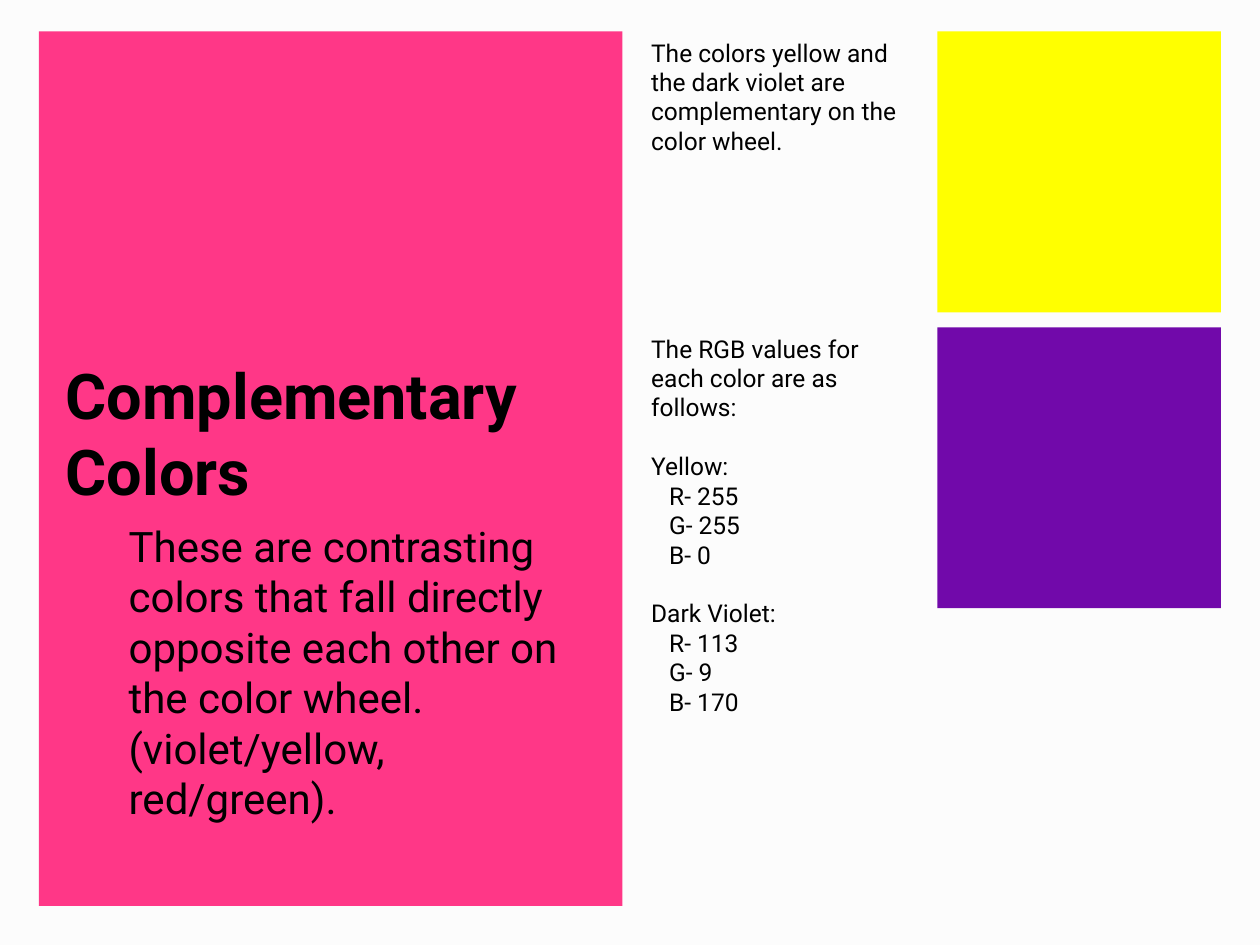
from lxml.etree import SubElement
from pptx import Presentation
from pptx.dml.color import RGBColor
from pptx.enum.shapes import MSO_SHAPE as Shape
from pptx.enum.text import MSO_ANCHOR as Anchor, MSO_AUTO_SIZE as AutoSize, PP_ALIGN as Align
from pptx.oxml.ns import qn
from pptx.util import Pt

COLORS = {
    "background": "FCFCFC",
    "panel": "FF3787",
    "yellow": "FFFF00",
    "violet": "7109AA",
    "text": "000000",
}
FONT = "Roboto"
NOTE_SIZE = 14
NOTE_LINE = 16.8
CHANNEL_INDENT = 10.3
SWATCH_WIDTH, SWATCH_HEIGHT = 162, 160.5
COLUMN_GAP = 8.6


def rgb(name):
    return RGBColor.from_string(COLORS[name])


def place(shape, left, top, width, height):
    shape.left, shape.top = Pt(left), Pt(top)
    shape.width, shape.height = Pt(width), Pt(height)


def format_runs(text_frame, size, bold=False):
    for paragraph in text_frame.paragraphs:
        paragraph.alignment = Align.LEFT
        for run in paragraph.runs:
            run.font.name = FONT
            run.font.size = Pt(size)
            run.font.bold = bold
            run.font.color.rgb = rgb("text")


def set_indent(paragraph, margin):
    """Indent the whole paragraph and remove its bullet."""
    properties = paragraph._p.get_or_add_pPr()
    properties.set("marL", str(Pt(margin)))
    properties.set("indent", "0")
    SubElement(properties, qn("a:buNone"))


def add_block(slide, color, left, top, width, height):
    block = slide.shapes.add_shape(
        Shape.RECTANGLE, Pt(left), Pt(top), Pt(width), Pt(height))
    block.shadow.inherit = False
    block.fill.solid()
    block.fill.fore_color.rgb = rgb(color)
    block.line.fill.background()
    return block


def add_title_panel(slide, left, top, width, height):
    """Colored panel behind the title and body placeholders."""
    title, body = slide.shapes.title, slide.placeholders[1]
    panel = add_block(slide, "panel", left, top, width, height)
    title._element.addprevious(panel._element)

    inset, title_top, title_height = 8, 184.3, 91.5
    text_left, text_width = left + inset, width - 2 * inset - 1
    place(title, text_left, top + title_top, text_width, title_height)
    place(body, text_left, top + title_top + title_height, text_width, 188.5)

    title.text_frame.text = "Complementary Colors"
    title.text_frame.vertical_anchor = Anchor.BOTTOM
    format_runs(title.text_frame, 36, bold=True)

    body.text_frame.text = (
        "These are contrasting colors that fall directly opposite each other "
        "on the color wheel. (violet/yellow, red/green).")
    body.text_frame.vertical_anchor = Anchor.TOP
    paragraph = body.text_frame.paragraphs[0]
    paragraph.level = 1
    paragraph.space_before = Pt(0)
    set_indent(paragraph, 36)
    format_runs(body.text_frame, 24)

    for placeholder in (title, body):
        placeholder.text_frame.auto_size = AutoSize.NONE


def add_note(slide, text, left, top, width, height):
    note = slide.shapes.add_textbox(Pt(left), Pt(top), Pt(width), Pt(height))
    note.text_frame.word_wrap = True
    note.text_frame.text = text
    format_runs(note.text_frame, NOTE_SIZE)
    return note


def add_rgb_note(slide, values, left, top, width, height):
    """List the channels of each color below its name."""
    lines = ["The RGB values for each color are as follows:"]
    for name, channels in values.items():
        lines.append(f"{name}:")
        lines += [f"{letter}- {value}" for letter, value in zip("RGB", channels)]
    note = add_note(slide, "\n".join(lines), left, top, width, height)
    for paragraph in note.text_frame.paragraphs[1:]:
        if paragraph.text.endswith(":"):
            paragraph.space_before = Pt(NOTE_LINE)
        else:
            set_indent(paragraph, CHANNEL_INDENT)


def add_color_column(slide, left, top):
    """Two rows, each with a note on the left and a swatch on the right."""
    swatch_left = left + SWATCH_WIDTH + COLUMN_GAP
    second_top = top + SWATCH_HEIGHT + COLUMN_GAP
    add_block(slide, "violet", swatch_left, second_top, SWATCH_WIDTH, SWATCH_HEIGHT)
    add_block(slide, "yellow", swatch_left, top, SWATCH_WIDTH, SWATCH_HEIGHT)
    add_note(
        slide,
        "The colors yellow and the dark violet are complementary on the color wheel.",
        left, top, SWATCH_WIDTH, SWATCH_HEIGHT)
    values = {"Yellow": (255, 255, 0), "Dark Violet": (113, 9, 170)}
    add_rgb_note(slide, values, left, second_top, SWATCH_WIDTH, 334.8)


def main():
    presentation = Presentation()
    presentation.slide_width, presentation.slide_height = Pt(720), Pt(540)
    slide = presentation.slides.add_slide(presentation.slide_layouts[1])
    slide.background.fill.solid()
    slide.background.fill.fore_color.rgb = rgb("background")
    add_title_panel(slide, 22.3, 18, 333.4, 499.7)
    add_color_column(slide, 365, 18)
    presentation.save("out.pptx")


if __name__ == "__main__":
    main()
